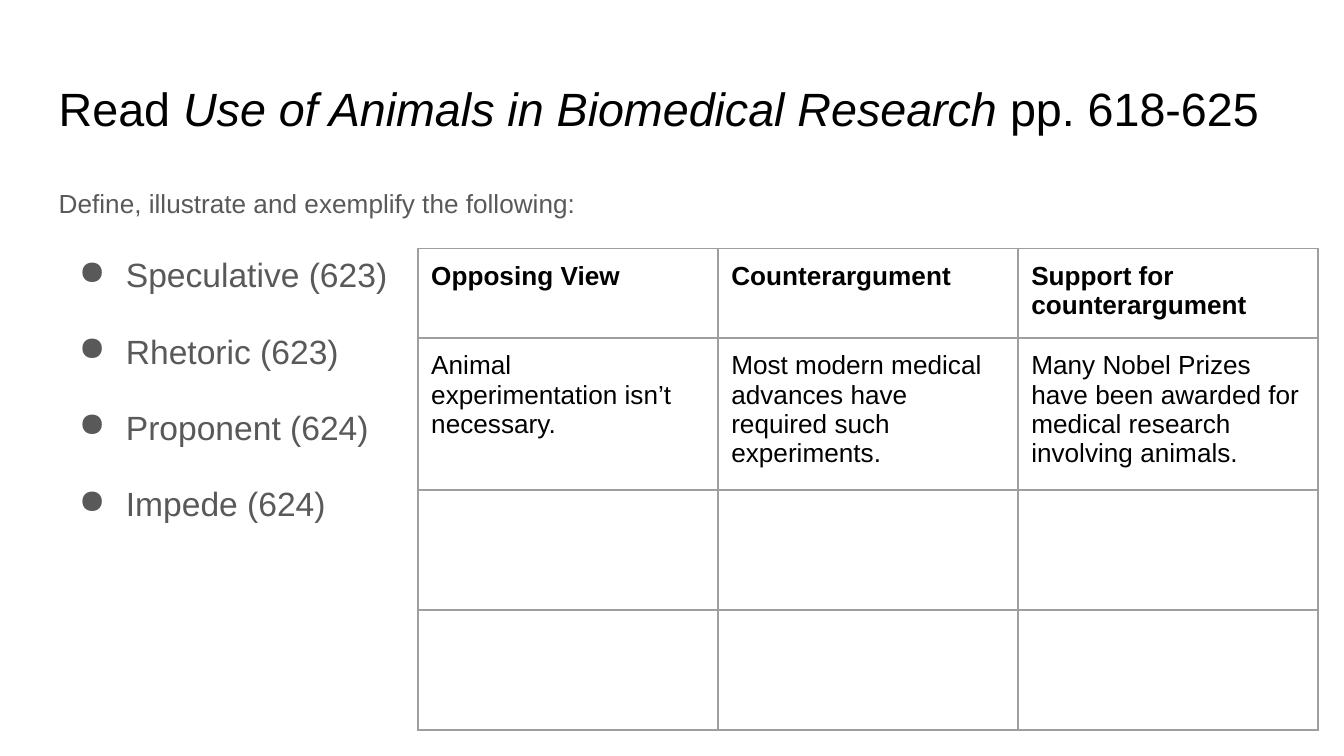
from dataclasses import dataclass

from lxml import etree
from pptx import Presentation
from pptx import util as u
from pptx.dml.color import RGBColor
from pptx.enum import text
from pptx.oxml import ns


@dataclass(frozen=True)
class Theme:
    font: str = "Arial"
    ink: str = "000000"
    muted: str = "595959"
    border: str = "9E9E9E"
    background: str = "FFFFFF"
    title_size: int = 25
    body_size: int = 14
    bullet_size: int = 18
    inset: float = 0.25
    border_width: float = 0.75


class SlideBuilder:
    def __init__(self, slide, theme):
        self.slide = slide
        self.theme = theme
        fill = slide.background.fill
        fill.solid()
        fill.fore_color.rgb = RGBColor.from_string(theme.background)

    def format_runs(self, paragraph, size, color, bold=False):
        for run in paragraph.runs:
            run.font.name = self.theme.font
            run.font.size = u.Pt(size)
            run.font.bold = bold
            run.font.color.rgb = RGBColor.from_string(color)

    def set_insets(self, target):
        inset = u.Cm(self.theme.inset)
        target.margin_left = target.margin_right = inset
        target.margin_top = target.margin_bottom = inset

    def title(self, left, top, width, height, parts):
        shape = self.slide.shapes.title
        shape.left, shape.top = u.Cm(left), u.Cm(top)
        shape.width, shape.height = u.Cm(width), u.Cm(height)
        frame = shape.text_frame
        frame.auto_size = text.MSO_AUTO_SIZE.NONE
        frame.vertical_anchor = text.MSO_ANCHOR.MIDDLE
        self.set_insets(frame)
        paragraph = frame.paragraphs[0]
        paragraph.alignment = text.PP_ALIGN.LEFT
        for words, italic in parts:
            run = paragraph.add_run()
            run.text = words
            run.font.italic = italic
        self.format_runs(paragraph, self.theme.title_size, self.theme.ink)

    def bullet(self, paragraph):
        properties = paragraph._p.get_or_add_pPr()
        properties.set("marL", str(u.Cm(1.27)))
        properties.set("indent", str(-u.Cm(0.89)))
        color = etree.SubElement(properties, ns.qn("a:buClr"))
        etree.SubElement(color, ns.qn("a:srgbClr"), val=self.theme.muted)
        etree.SubElement(properties, ns.qn("a:buChar"), char="●")

    def bullet_list(self, left, top, width, height, intro, items):
        shape = self.slide.shapes.add_textbox(
            u.Cm(left), u.Cm(top), u.Cm(width), u.Cm(height)
        )
        frame = shape.text_frame
        frame.word_wrap = True
        self.set_insets(frame)
        frame.text = "\n".join([intro, *items])
        for index, paragraph in enumerate(frame.paragraphs):
            paragraph.line_spacing = 1.15
            paragraph.space_after = u.Pt(16)
            size = self.theme.bullet_size if index else self.theme.body_size
            self.format_runs(paragraph, size, self.theme.muted)
            if index:
                self.bullet(paragraph)

    def cell_borders(self, cell):
        properties = cell._tc.get_or_add_tcPr()
        width = str(u.Pt(self.theme.border_width))
        for side in ("lnL", "lnR", "lnT", "lnB"):
            line = etree.SubElement(properties, ns.qn(f"a:{side}"), w=width)
            fill = etree.SubElement(line, ns.qn("a:solidFill"))
            etree.SubElement(fill, ns.qn("a:srgbClr"), val=self.theme.border)

    def table(self, left, top, column_width, row_heights, rows):
        columns = len(rows[0])
        table = self.slide.shapes.add_table(
            len(row_heights), columns, u.Cm(left), u.Cm(top),
            u.Cm(column_width * columns), u.Cm(sum(row_heights)),
        ).table
        table.horz_banding = False
        for column in table.columns:
            column.width = u.Cm(column_width)
        for row, height in zip(table.rows, row_heights):
            row.height = u.Cm(height)
        for cell in table.iter_cells():
            self.cell_borders(cell)
            cell.fill.background()
            self.set_insets(cell)
        for row_index, row in enumerate(rows):
            for column_index, words in enumerate(row):
                frame = table.cell(row_index, column_index).text_frame
                frame.text = words
                self.format_runs(
                    frame.paragraphs[0], self.theme.body_size,
                    self.theme.ink, bold=row_index == 0,
                )


def main():
    presentation = Presentation()
    presentation.slide_width = u.Cm(25.4)
    presentation.slide_height = u.Cm(14.29)
    slide = presentation.slides.add_slide(presentation.slide_layouts[5])
    builder = SlideBuilder(slide, Theme())

    builder.title(0.86, 1.24, 23.67, 1.6, [
        ("Read ", False),
        ("Use of Animals in Biomedical Research ", True),
        ("pp. 618-625", False),
    ])
    builder.bullet_list(
        0.86, 3.2, 23.67, 9.5,
        "Define, illustrate and exemplify the following:",
        ["Speculative (623)", "Rhetoric (623)", "Proponent (624)", "Impede (624)"],
    )
    builder.table(7.9, 4.7, 5.67, [1.63, 2.72, 2.27, 2.27], [
        ["Opposing View", "Counterargument", "Support for counterargument"],
        [
            "Animal experimentation isn’t necessary.",
            "Most modern medical advances have required such experiments.",
            "Many Nobel Prizes have been awarded for medical research involving animals.",
        ],
    ])
    presentation.save("out.pptx")


if __name__ == "__main__":
    main()
